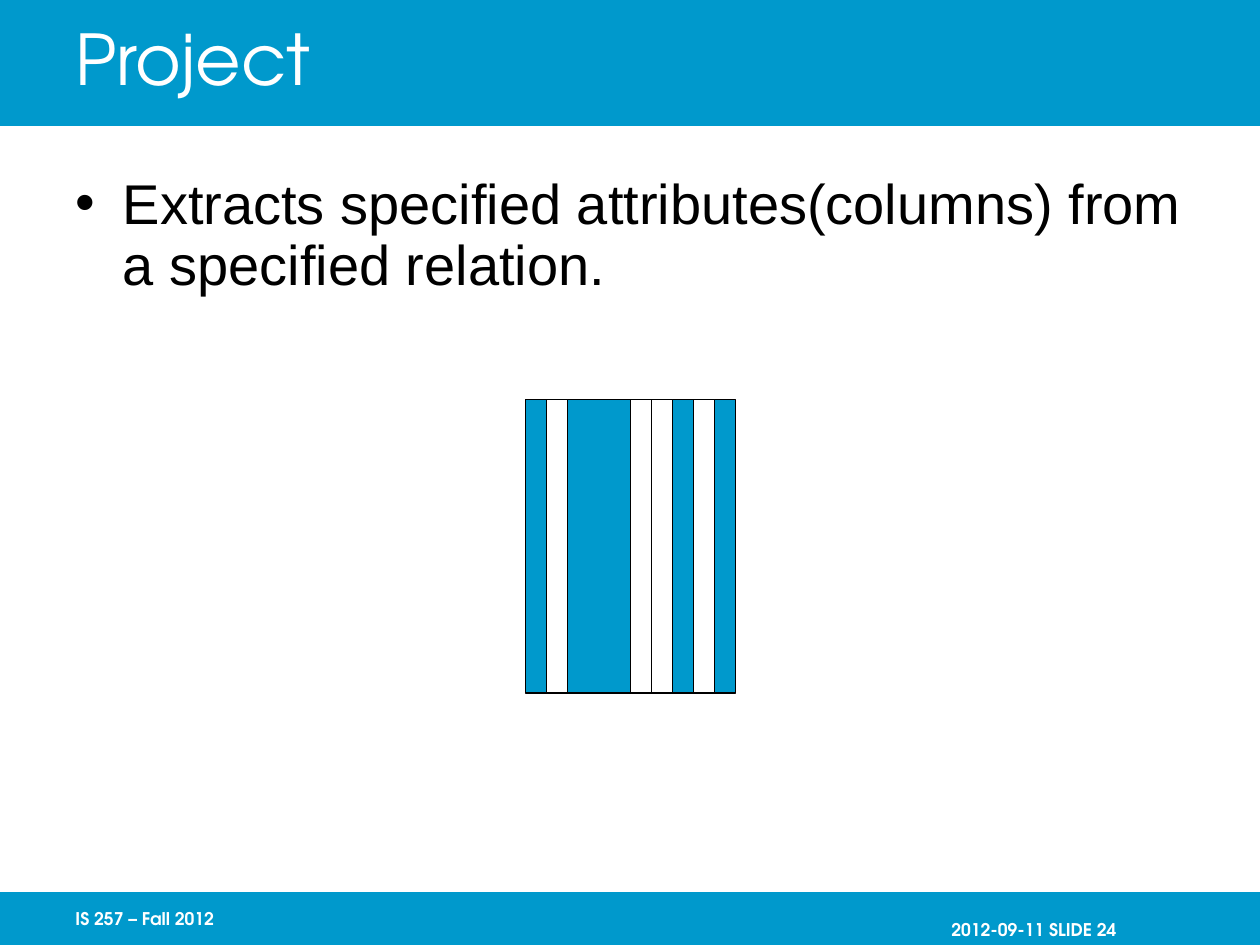
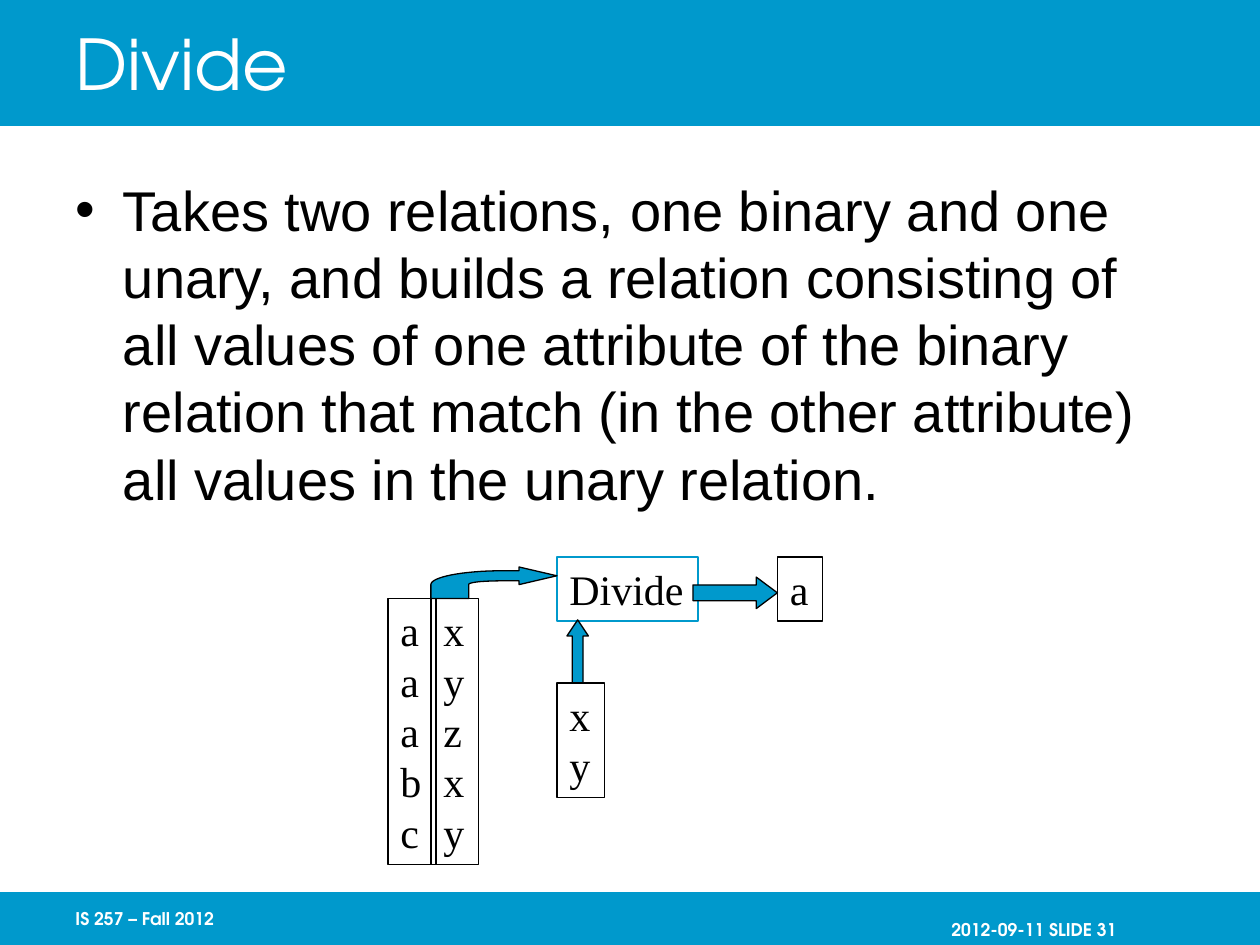
from pptx import Presentation
from pptx.dml.color import RGBColor
from pptx.enum.shapes import MSO_SHAPE
from pptx.enum.text import MSO_ANCHOR, MSO_AUTO_SIZE, PP_ALIGN
from pptx.util import Inches, Pt

TEAL = RGBColor(0x00, 0x99, 0xCC)
WHITE = RGBColor(0xFF, 0xFF, 0xFF)
BLACK = RGBColor(0x00, 0x00, 0x00)

TITLE_FONT = {"name": "TeX Gyre Adventor", "size": Pt(40)}
FOOTER_FONT = {"name": "TeX Gyre Adventor", "size": Pt(10), "bold": True}
BODY_FONT = {"name": "Arial", "size": Pt(32)}
CELL_FONT = {"name": "Times New Roman", "size": Pt(24)}

FOOTER_AREA = {"top": 7.08, "width": 2.08, "height": 0.42}
STRIPE = 1 / 6


class LectureDeck:
    """Holds the lecture style and the slide being drawn."""

    def __init__(self):
        self.deck = Presentation()
        self.deck.slide_width, self.deck.slide_height = Inches(10), Inches(7.5)
        self.page = None

    def start_page(self, number):
        self.page = self.deck.slides.add_slide(self.deck.slide_layouts[1])
        for top, height in ((0, 1), (7.08, 0.42)):
            band = self.shape(0, top, 10, height, TEAL, None)
            self.page.shapes.title.element.addprevious(band.element)
        self.footer(7.42, f"2012-09-11 SLIDE {number}", PP_ALIGN.RIGHT,
                    {"margin_left": 0, "margin_right": Inches(0.64), "margin_top": Inches(0.22)})
        self.footer(0.5, "IS 257 – Fall 2012", PP_ALIGN.LEFT, {"margin_right": 0})

    def place(self, box, left, top, width, height):
        box.left, box.top = Inches(left), Inches(top)
        box.width, box.height = Inches(width), Inches(height)

    def set_text(self, box, lines, font, color, frame_format, paragraph_format):
        frame = box.text_frame
        frame.text = "\n".join(lines)
        frame.auto_size = MSO_AUTO_SIZE.NONE
        for name, value in frame_format.items():
            setattr(frame, name, value)
        for para in frame.paragraphs:
            for name, value in paragraph_format.items():
                setattr(para, name, value)
            for span in para.runs:
                for name, value in font.items():
                    setattr(span.font, name, value)
                span.font.color.rgb = color

    def footer(self, left, text, align, margins):
        box = self.page.shapes.add_textbox(0, 0, 0, 0)
        self.place(box, left, **FOOTER_AREA)
        frame_format = {"word_wrap": True, "vertical_anchor": MSO_ANCHOR.MIDDLE, **margins}
        self.set_text(box, [text], FOOTER_FONT, WHITE, frame_format, {"alignment": align})

    def title(self, text, line_spacing=1.0):
        box = self.page.shapes.title
        self.place(box, 0.5, 0, 8.5, 1)
        self.set_text(box, [text], TITLE_FONT, WHITE, {"vertical_anchor": MSO_ANCHOR.MIDDLE},
                      {"alignment": PP_ALIGN.LEFT, "line_spacing": line_spacing})

    def bullet(self, text, line_height):
        box = self.page.placeholders[1]
        self.place(box, 0.5, 1.34, 9, 5.42)
        self.set_text(box, [text], BODY_FONT, BLACK, {"margin_bottom": 0},
                      {"line_spacing": Pt(line_height), "space_before": Pt(0)})

    def paint(self, shape, fill, line):
        shape.shadow.inherit = False
        if fill is None:
            shape.fill.background()
        else:
            shape.fill.solid()
            shape.fill.fore_color.rgb = fill
        if line is None:
            shape.line.fill.background()
        else:
            shape.line.color.rgb = line
            shape.line.width = Pt(0.75)
        return shape

    def shape(self, left, top, width, height, fill, line=BLACK, kind=MSO_SHAPE.RECTANGLE):
        shape = self.page.shapes.add_shape(kind, 0, 0, 0, 0)
        self.place(shape, left, top, width, height)
        return self.paint(shape, fill, line)

    def relation(self, left, top, width, height, values, line=BLACK):
        box = self.shape(left, top, width, height, None, line)
        self.set_text(box, values, CELL_FONT, BLACK,
                      {"word_wrap": False, "vertical_anchor": MSO_ANCHOR.TOP},
                      {"alignment": PP_ALIGN.LEFT, "line_spacing": Pt(28.8)})

    def arrow(self, kind, left, top, width, height, head):
        arrow = self.shape(left, top, width, height, TEAL, kind=kind)
        arrow.adjustments[0], arrow.adjustments[1] = 0.5, head

    def outline(self, points):
        corners = [(Inches(x), Inches(y)) for x, y in points]
        builder = self.page.shapes.build_freeform(*corners[0])
        builder.add_line_segments(corners[1:], close=True)
        self.paint(builder.convert_to_shape(), TEAL, BLACK)


def curve(start, first, second, end, steps=16):
    """Return the points along a cubic curve."""
    return [
        tuple((1 - t) ** 3 * a + 3 * (1 - t) ** 2 * t * b + 3 * (1 - t) * t ** 2 * c + t ** 3 * d
              for a, b, c, d in zip(start, first, second, end))
        for t in (step / steps for step in range(steps + 1))
    ]


def draw_project(lecture):
    """Draw the relation with its extracted columns."""
    lecture.start_page(24)
    lecture.title("Project", 0.9)
    lecture.bullet("Extracts specified attributes(columns) from a specified relation.", 34.6)
    left, top, height = 4.17, 3.17, 2.33
    lecture.shape(left, top, 10 * STRIPE, height, TEAL)
    for column in (1, 5, 6, 8):
        lecture.shape(left + column * STRIPE, top, STRIPE, height, WHITE)


def draw_divide(lecture):
    """Draw the division of a binary relation by a unary one."""
    lecture.start_page(31)
    lecture.title("Divide")
    lecture.bullet(
        "Takes two relations, one binary and one unary, and builds a relation consisting of "
        "all values of one attribute of the binary relation that match (in the other "
        "attribute) all values in the unary relation.", 38.4)
    lecture.relation(6.17, 4.42, 0.36, 0.51, "a")
    lecture.relation(4.42, 5.42, 0.38, 0.91, "xy")
    lecture.relation(3.42, 4.75, 0.38, 2.11, "xyzxy")
    lecture.relation(3.08, 4.75, 0.38, 2.11, "aaabc")
    lecture.relation(4.42, 4.42, 1.12, 0.51, ["Divide"], TEAL)
    outer = curve((3.99, 4.53), (3.67, 4.53), (3.42, 4.58), (3.42, 4.64))
    inner = curve((3.72, 4.64), (3.72, 4.62), (3.84, 4.61), (3.99, 4.61))
    lecture.outline([(4.42, 4.57), (4.12, 4.5), (4.12, 4.53), *outer,
                     (3.42, 4.75), (3.72, 4.75), *inner, (4.12, 4.61), (4.12, 4.64)])
    lecture.arrow(MSO_SHAPE.UP_ARROW, 4.5, 4.92, 0.17, 0.5, 0.75)
    lecture.arrow(MSO_SHAPE.RIGHT_ARROW, 5.5, 4.58, 0.67, 0.25, 0.67)


def main():
    """Build both slides and save the deck."""
    lecture = LectureDeck()
    draw_project(lecture)
    draw_divide(lecture)
    lecture.deck.save("out.pptx")


if __name__ == "__main__":
    main()
